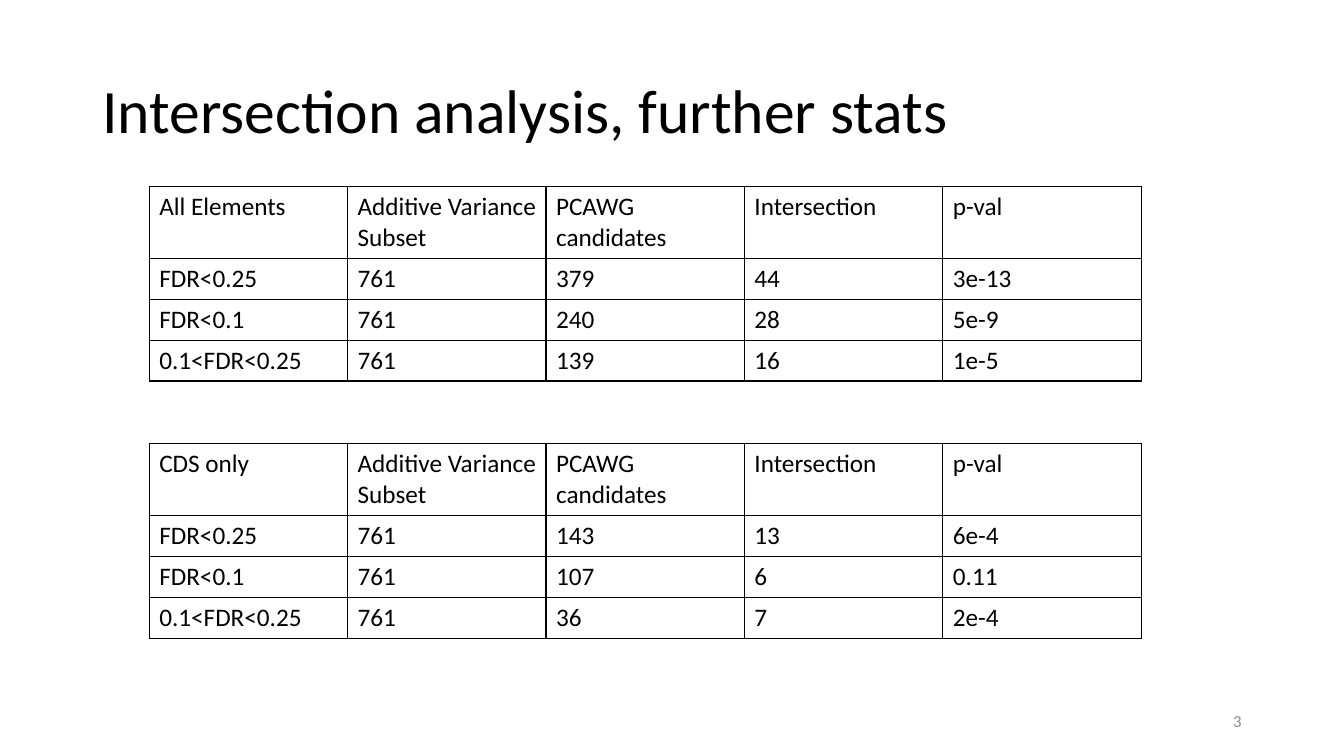
from lxml import etree
from pptx import Presentation
from pptx.dml.color import RGBColor
from pptx.enum import text
from pptx.oxml import ns
from pptx.util import Cm, Pt

TITLE = "Intersection analysis, further stats"
PAGE = "3"
HEADINGS = ["Additive Variance Subset", "PCAWG candidates", "Intersection", "p-val"]
TABLES = [
    ("All Elements", [
        ("FDR<0.25", "761", "379", "44", "3e-13"),
        ("FDR<0.1", "761", "240", "28", "5e-9"),
        ("0.1<FDR<0.25", "761", "139", "16", "1e-5"),
    ]),
    ("CDS only", [
        ("FDR<0.25", "761", "143", "13", "6e-4"),
        ("FDR<0.1", "761", "107", "6", "0.11"),
        ("0.1<FDR<0.25", "761", "36", "7", "2e-4"),
    ]),
]

BLACK = RGBColor(0x00, 0x00, 0x00)
GREY = RGBColor(0x8C, 0x8C, 0x8C)
FONT = "Calibri"

TABLE_LEFT, TABLE_TOP, TABLE_STEP = Cm(3.76), Cm(4.7), Cm(6.48)
COL_W, HEAD_H, ROW_H = Cm(5), Cm(1.81), Cm(1.03)


def write(p, words, size, color=BLACK):
    r = p.add_run()
    r.text = words
    for name, value in {"name": FONT, "size": Pt(size)}.items():
        setattr(r.font, name, value)
    r.font.color.rgb = color


def add_label(s, box, words, size, color=BLACK, **para):
    tf = s.shapes.add_textbox(*map(Cm, box)).text_frame
    tf.word_wrap = True
    tf.vertical_anchor = text.MSO_ANCHOR.MIDDLE
    p = tf.paragraphs[0]
    for name, value in para.items():
        setattr(p, name, value)
    write(p, words, size, color)


def add_borders(cell):
    tc_pr = cell._tc.get_or_add_tcPr()
    for side in ("lnL", "lnR", "lnT", "lnB"):
        ln = etree.SubElement(tc_pr, ns.qn(f"a:{side}"), w=str(Pt(1)))
        fill = etree.SubElement(ln, ns.qn("a:solidFill"))
        etree.SubElement(fill, ns.qn("a:srgbClr"), val=str(BLACK))


def add_stats(s, top, rows):
    heights = [HEAD_H] + [ROW_H] * (len(rows) - 1)
    n_cols = len(rows[0])
    table = s.shapes.add_table(len(rows), n_cols, TABLE_LEFT, top,
                               COL_W * n_cols, sum(heights)).table
    for flag in ("first_row", "horz_banding"):
        setattr(table, flag, False)
    for col in table.columns:
        col.width = COL_W
    for row, height, values in zip(table.rows, heights, rows):
        row.height = height
        for cell, value in zip(row.cells, values):
            add_borders(cell)
            cell.fill.background()
            write(cell.text_frame.paragraphs[0], value, 18)


def main():
    prs = Presentation()
    prs.slide_width, prs.slide_height = Cm(33.87), Cm(19.05)
    s = prs.slides.add_slide(prs.slide_layouts[6])
    add_label(s, (2.33, 1.01, 29.21, 3.68), TITLE, 44, line_spacing=0.9)
    for i, (group, rows) in enumerate(TABLES):
        add_stats(s, TABLE_TOP + i * TABLE_STEP, [[group] + HEADINGS] + rows)
    add_label(s, (23.92, 17.66, 7.62, 1.01), PAGE, 12, GREY,
              alignment=text.PP_ALIGN.RIGHT)
    prs.save("out.pptx")


if __name__ == "__main__":
    main()
